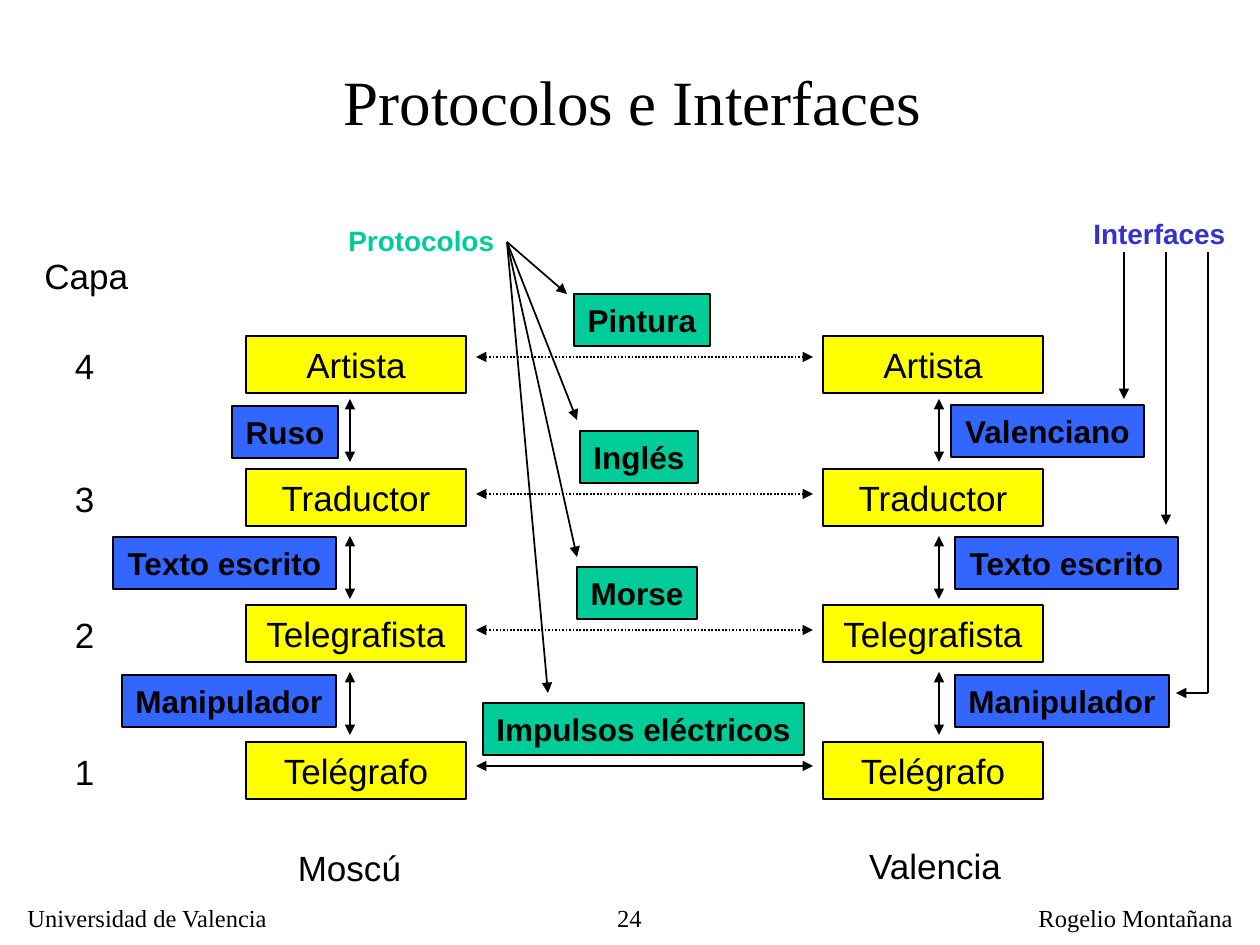
import pptx
import pptx.util
import pptx.dml.color
import pptx.enum.dml
import pptx.enum.shapes
import pptx.enum.text
import pptx.oxml.ns
from dataclasses import dataclass
from lxml import etree


@dataclass(frozen=True)
class Theme:
    black: str = "000000"
    layer: str = "FFFF00"
    protocol: str = "00CC99"
    interface: str = "3366FF"
    interface_heading: str = "3333CC"
    sans: str = "Arial"
    serif: str = "Times New Roman"
    title: int = 36
    body: int = 20
    label: int = 18
    heading: int = 16
    footer: int = 14


theme = Theme()
EMU_PER_PX = 914400 / 126
ALIGN = pptx.enum.text.PP_ALIGN
rgb = pptx.dml.color.RGBColor.from_string

presentation = pptx.Presentation()
presentation.slide_width = round(1260 * EMU_PER_PX)
presentation.slide_height = round(945 * EMU_PER_PX)
slide = presentation.slides.add_slide(presentation.slide_layouts[5])


def add_text(text, box, size, align=ALIGN.CENTER, color=theme.black, font=theme.sans,
             bold=False, fill=None, shape=None, wrap=False):
    """Write one line of text in a given shape, a filled rectangle or a text box."""
    left, top, width, height = [round(value * EMU_PER_PX) for value in box]
    if shape is not None:
        shape.left, shape.top, shape.width, shape.height = left, top, width, height
    elif fill:
        rectangle = pptx.enum.shapes.MSO_SHAPE.RECTANGLE
        shape = slide.shapes.add_shape(rectangle, left, top, width, height)
        shape.shadow.inherit = False
        shape.fill.solid()
        shape.fill.fore_color.rgb = rgb(fill)
        shape.line.color.rgb = rgb(theme.black)
        shape.line.width = pptx.util.Pt(1)
    else:
        shape = slide.shapes.add_textbox(left, top, width, height)
    frame = shape.text_frame
    frame.word_wrap = wrap
    frame.auto_size = pptx.enum.text.MSO_AUTO_SIZE.NONE
    if fill or shape.is_placeholder:
        frame.vertical_anchor = pptx.enum.text.MSO_ANCHOR.MIDDLE
    paragraph = frame.paragraphs[0]
    paragraph.alignment = align
    run = paragraph.add_run()
    run.text = text
    run.font.name = font
    run.font.size = pptx.util.Pt(size)
    run.font.bold = bold
    run.font.color.rgb = rgb(color)


def add_line(start, end, ends=("tailEnd",), dotted=False):
    """Draw a straight line with a triangle at each of the named ends."""
    points = [round(value * EMU_PER_PX) for value in (*start, *end)]
    straight = pptx.enum.shapes.MSO_CONNECTOR.STRAIGHT
    connector = slide.shapes.add_connector(straight, *points)
    connector.line.color.rgb = rgb(theme.black)
    connector.line.width = pptx.util.Pt(1)
    if dotted:
        connector.line.dash_style = pptx.enum.dml.MSO_LINE.ROUND_DOT
    outline = connector.line._get_or_add_ln()
    for name in ends:
        etree.SubElement(outline, pptx.oxml.ns.qn("a:" + name), type="triangle")
    properties = connector._element.spPr
    etree.SubElement(properties, pptx.oxml.ns.qn("a:effectLst"))


BOTH = ("headEnd", "tailEnd")

# Title and footer
add_text("Protocolos e Interfaces", (244, 42, 777, 116), theme.title,
         font=theme.serif, shape=slide.shapes.title, wrap=True)
for text, box, align in [
    ("Universidad de Valencia", (15, 897, 268, 42), ALIGN.LEFT),
    ("24", (520, 897, 134, 39), ALIGN.RIGHT),
    ("Rogelio Montañana", (1026, 897, 219, 42), ALIGN.LEFT),
]:
    add_text(text, box, theme.footer, align, font=theme.serif)

# Layers: number, a box on each side, and the link between the two
layers = [
    ("4", "Artista", 336, 357),
    ("3", "Traductor", 469, 494),
    ("2", "Telegrafista", 605, 630),
    ("1", "Telégrafo", 742, 766),
]
for number, name, top, link in layers:
    add_text(number, (62, top + 2, 45, 54), theme.body)
    for left in (246, 823):
        add_text(name, (left, top, 220, 57), theme.body, fill=theme.layer, wrap=True)
    add_line((476, link), (813, link), BOTH, dotted=number != "1")

# Arrows between neighbouring layers
for top in (399, 536, 672):
    for x in (350, 939):
        add_line((x, top), (x, top + 63), BOTH)

# Column captions
add_text("Capa", (32, 248, 110, 54), theme.body, ALIGN.LEFT)
add_text("Moscú", (285, 840, 129, 54), theme.body)
add_text("Valencia", (855, 838, 160, 54), theme.body)

# Protocol and interface labels
labels = {
    theme.protocol: [
        ("Pintura", 574, 294, 136),
        ("Inglés", 580, 431, 118),
        ("Morse", 577, 567, 120),
        ("Impulsos eléctricos", 483, 703, 321),
    ],
    theme.interface: [
        ("Ruso", 232, 406, 106),
        ("Valenciano", 951, 405, 193),
        ("Texto escrito", 113, 537, 223),
        ("Texto escrito", 955, 537, 223),
        ("Manipulador", 122, 675, 214),
        ("Manipulador", 955, 675, 214),
    ],
}
for fill, entries in labels.items():
    for text, left, top, width in entries:
        add_text(text, (left, top, width, 52), theme.label, bold=True, fill=fill)

# Heading and arrows to the protocols
add_text("Protocolos", (336, 217, 171, 47), theme.heading, ALIGN.LEFT,
         theme.protocol, bold=True)
for end in [(567, 294), (577, 420), (577, 557), (548, 693)]:
    add_line((507, 242), end)

# Heading and arrows to the interfaces
add_text("Interfaces", (1081, 210, 158, 47), theme.heading, ALIGN.LEFT,
         theme.interface_heading, bold=True)
add_line((1124, 252), (1124, 399))
add_line((1166, 252), (1166, 525))
add_line((1208, 252), (1208, 693), ends=())
add_line((1208, 693), (1176, 693))

presentation.save("out.pptx")
